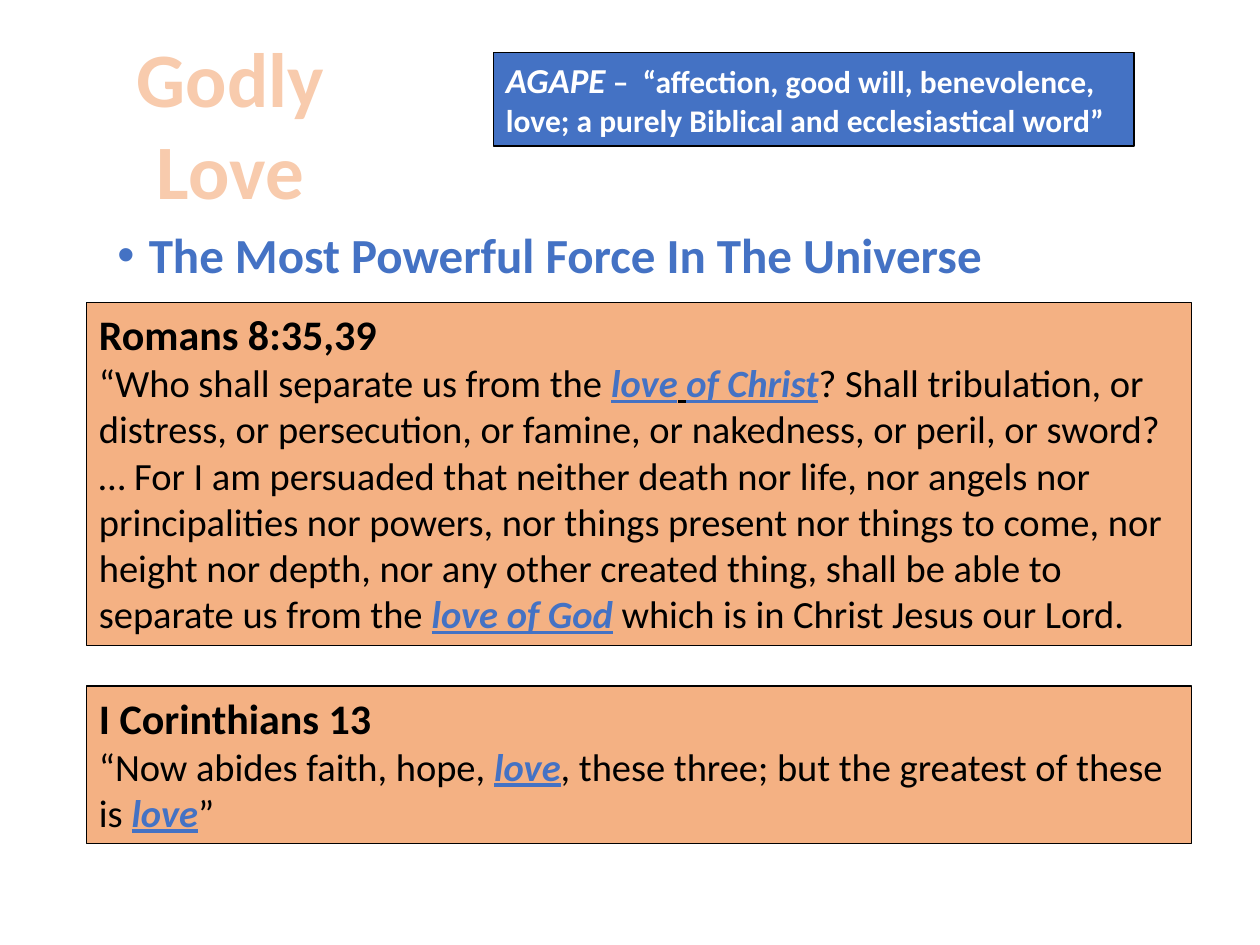
from lxml.etree import SubElement
from pptx import Presentation
from pptx.dml.color import RGBColor
from pptx.enum.shapes import MSO_SHAPE as Shape
from pptx.enum.text import MSO_ANCHOR as Anchor, PP_ALIGN as Align
from pptx.oxml.ns import qn
from pptx.util import Pt

COLORS = {
    "blue": "4472C4",
    "peach": "F4B183",
    "pale": "F8CBAD",
    "orange": "ED7D31",
    "black": "000000",
    "white": "FFFFFF",
}
FONT = "Calibri"
VERSE_LEFT, VERSE_WIDTH = 49.5, 631.5

# Verse pieces are (text, style); styles are bold/italic, underline, colour.
STYLES = {
    "plain": (False, False, "black"),
    "key": (True, True, "blue"),
    "dark gap": (False, True, "black"),
    "blue gap": (False, True, "blue"),
}
ROMANS = [
    ("“Who shall separate us from the ", "plain"),
    ("love", "key"),
    (" ", "dark gap"),
    ("of Christ", "key"),
    ("? Shall tribulation, or distress, or persecution, or famine, or nakedness, "
     "or peril, or sword? … For I am persuaded that neither death nor life, nor "
     "angels nor principalities nor powers, nor things present nor things to "
     "come, nor height nor depth, nor any other created thing, shall be able to "
     "separate us from the ", "plain"),
    ("love", "key"),
    (" ", "blue gap"),
    ("of God", "key"),
    (" which is in Christ Jesus our Lord.", "plain"),
]
CORINTHIANS = [
    ("“Now abides faith, hope, ", "plain"),
    ("love", "key"),
    (", these three; but the greatest of these is ", "plain"),
    ("love", "key"),
    ("”", "plain"),
]


def color(name):
    return RGBColor.from_string(COLORS[name])


def place(item, left, top, width, height):
    item.left, item.top = Pt(left), Pt(top)
    item.width, item.height = Pt(width), Pt(height)


def set_font(font, size, color_name, bold=True):
    font.name, font.size, font.bold = FONT, Pt(size), bold
    font.color.rgb = color(color_name)


def outline_text(span, color_name, width):
    properties = span._r.get_or_add_rPr()
    line = SubElement(properties, qn("a:ln"))
    properties.insert(0, line)  # the schema wants the line before the fill
    line.set("w", str(Pt(width)))
    fill = SubElement(line, qn("a:solidFill"))
    SubElement(fill, qn("a:srgbClr")).set("val", COLORS[color_name])


def fill_title(title):
    place(title, 59, 13.7, 145.5, 113.8)
    title.text_frame.vertical_anchor = Anchor.TOP
    para = title.text_frame.paragraphs[0]
    para.text = "Godly\vLove"
    para.alignment = Align.CENTER
    set_font(para.font, 44, "pale")
    for span in para.runs:
        outline_text(span, "orange", 1.75)


def fill_body(body):
    place(body, 59.8, 128.2, 620.6, 342.7)
    para = body.text_frame.paragraphs[0]
    para.text = "The Most Powerful Force In The Universe"
    para.line_spacing, para.space_before = 0.9, Pt(10)
    set_font(para.font, 28, "blue")
    properties = para._p.get_or_add_pPr()
    properties.set("marL", str(Pt(18)))
    properties.set("indent", str(-Pt(18)))


def add_box(page, left, top, width, height, fill):
    box = page.shapes.add_shape(
        Shape.RECTANGLE, Pt(left), Pt(top), Pt(width), Pt(height))
    box.shadow.inherit = False
    box.fill.solid()
    box.fill.fore_color.rgb = color(fill)
    box.line.color.rgb = color("black")
    box.line.width = Pt(0.75)
    box.text_frame.word_wrap = True
    box.text_frame.vertical_anchor = Anchor.TOP
    box.text_frame.paragraphs[0].alignment = Align.LEFT
    return box


def add_definition(page):
    box = add_box(page, 282, 30, 366, 53.5, "blue")
    para = box.text_frame.paragraphs[0]
    set_font(para.font, 18, "white")
    term = para.add_run()
    term.text = "AGAPE"
    term.font.size, term.font.italic = Pt(20), True
    meaning = para.add_run()
    meaning.text = (" –  “affection, good will, benevolence, love; "
                    "a purely Biblical and ecclesiastical word”")


def add_verse(page, top, height, reference, pieces):
    box = add_box(page, VERSE_LEFT, top, VERSE_WIDTH, height, "peach")
    heading = box.text_frame.paragraphs[0]
    heading.text = reference
    set_font(heading.font, 24, "black")
    para = box.text_frame.add_paragraph()
    para.alignment = Align.LEFT
    for text, style in pieces:
        emphasis, underline, color_name = STYLES[style]
        span = para.add_run()
        span.text = text
        set_font(span.font, 22, color_name, emphasis)
        span.font.italic, span.font.underline = emphasis, underline


def main():
    deck = Presentation()
    deck.slide_width, deck.slide_height = Pt(720), Pt(540)
    page = deck.slides.add_slide(deck.slide_layouts[1])
    fill_title(page.shapes.title)
    fill_body(page.placeholders[1])
    add_definition(page)
    add_verse(page, 173, 196, "Romans 8:35,39", ROMANS)
    add_verse(page, 392, 90, "I Corinthians 13", CORINTHIANS)
    deck.save("out.pptx")


if __name__ == "__main__":
    main()
